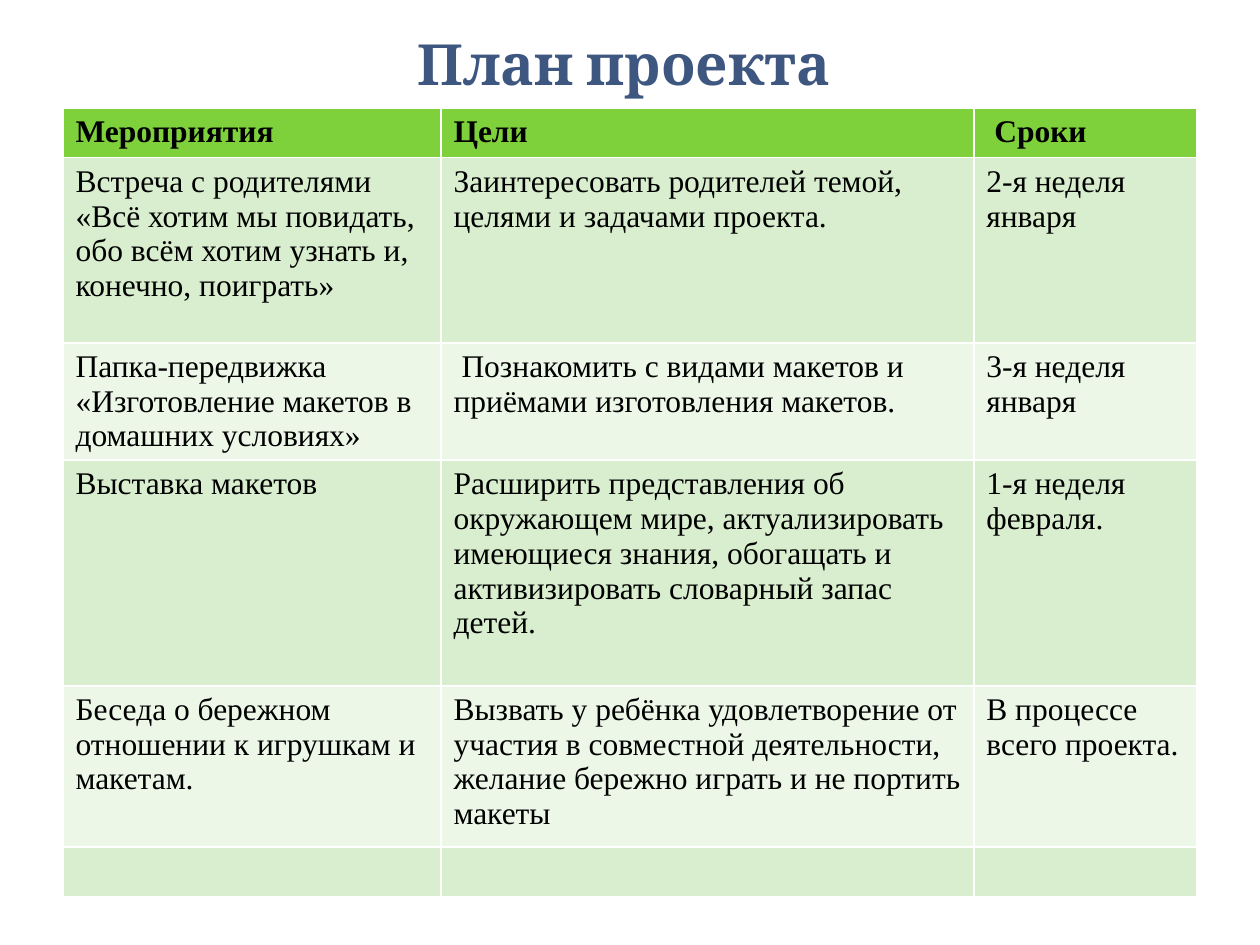
from dataclasses import dataclass

from pptx import Presentation
from pptx.dml.color import RGBColor
from pptx.enum.text import MSO_ANCHOR, PP_ALIGN
from pptx.util import Cm, Pt

CENTER = PP_ALIGN.CENTER
MIDDLE = MSO_ANCHOR.MIDDLE
TITLE_ONLY = 5

COLORS = {
    "title": "3E5780",
    "text": "000000",
    "header": "7FD13B",
    "odd": "D8EECE",
    "even": "ECF7E8",
}
COLUMN_WIDTHS = (7.62, 10.74, 4.5)
FIRST_LINE_INDENT = Cm(0.16)


@dataclass
class PlanRow:
    height: float
    activity: str = ""
    goal: str = ""
    dates: str = ""
    indented: tuple[int, ...] = ()  # columns whose first line is indented


PLAN = [
    PlanRow(1, "Мероприятия", "Цели", "Сроки", indented=(2,)),
    PlanRow(3.73, "Встреча с родителями «Всё хотим мы повидать, обо всём хотим "
            "узнать и, конечно, поиграть»",
            "Заинтересовать родителей темой, целями и задачами проекта.",
            "2-я неделя\nянваря"),
    PlanRow(2.26, "Папка-передвижка «Изготовление макетов в домашних условиях»",
            "Познакомить с видами макетов и приёмами изготовления макетов.",
            "3-я неделя\nянваря", indented=(1,)),
    PlanRow(4.55, "Выставка макетов",
            "Расширить представления об окружающем мире, актуализировать имеющиеся "
            "знания, обогащать и активизировать словарный запас детей.",
            "1-я неделя февраля."),
    PlanRow(3.25, "Беседа о бережном отношении к игрушкам и макетам.",
            "Вызвать у ребёнка удовлетворение от участия в совместной деятельности, "
            "желание бережно играть и не портить макеты",
            "В процессе всего проекта."),
    PlanRow(1),
]


def set_font(para, name: str, size: float, color: str, bold: bool) -> None:
    font = para.font
    font.name, font.size, font.bold = name, Pt(size), bold
    font.color.rgb = RGBColor.from_string(COLORS[color])


def add_title(slide, text: str) -> None:
    title = slide.shapes.title
    title.left, title.top = Cm(1.27), Cm(0.76)
    title.width, title.height = Cm(22.63), Cm(1.02)
    frame = title.text_frame
    frame.text = text
    frame.vertical_anchor = MIDDLE
    para = frame.paragraphs[0]
    para.alignment = CENTER
    set_font(para, "Cambria", 32.4, "title", True)


def fill_cell(cell, text: str, fill: str, bold: bool, indented: bool) -> None:
    cell.fill.solid()
    cell.fill.fore_color.rgb = RGBColor.from_string(COLORS[fill])
    cell.text = text
    for para in cell.text_frame.paragraphs:
        if indented:
            para._p.get_or_add_pPr().set("indent", str(FIRST_LINE_INDENT))
        set_font(para, "Times New Roman", 18, "text", bold)


def add_plan(slide, plan: list[PlanRow]) -> None:
    # The default table style supplies the white cell borders
    table = slide.shapes.add_table(
        len(plan), len(COLUMN_WIDTHS), Cm(1.27), Cm(2.18),
        Cm(sum(COLUMN_WIDTHS)), Cm(sum(row.height for row in plan))).table
    for column, width in zip(table.columns, COLUMN_WIDTHS):
        column.width = Cm(width)
    for index, row in enumerate(plan):
        table.rows[index].height = Cm(row.height)
        is_header = index == 0
        fill = "header" if is_header else "odd" if index % 2 else "even"
        for column, text in enumerate((row.activity, row.goal, row.dates)):
            fill_cell(table.cell(index, column), text, fill, is_header,
                      column in row.indented)


def main() -> None:
    deck = Presentation()
    deck.slide_width, deck.slide_height = Cm(25.4), Cm(19.05)
    slide = deck.slides.add_slide(deck.slide_layouts[TITLE_ONLY])
    add_title(slide, "План проекта")
    add_plan(slide, PLAN)
    deck.save("out.pptx")


if __name__ == "__main__":
    main()
